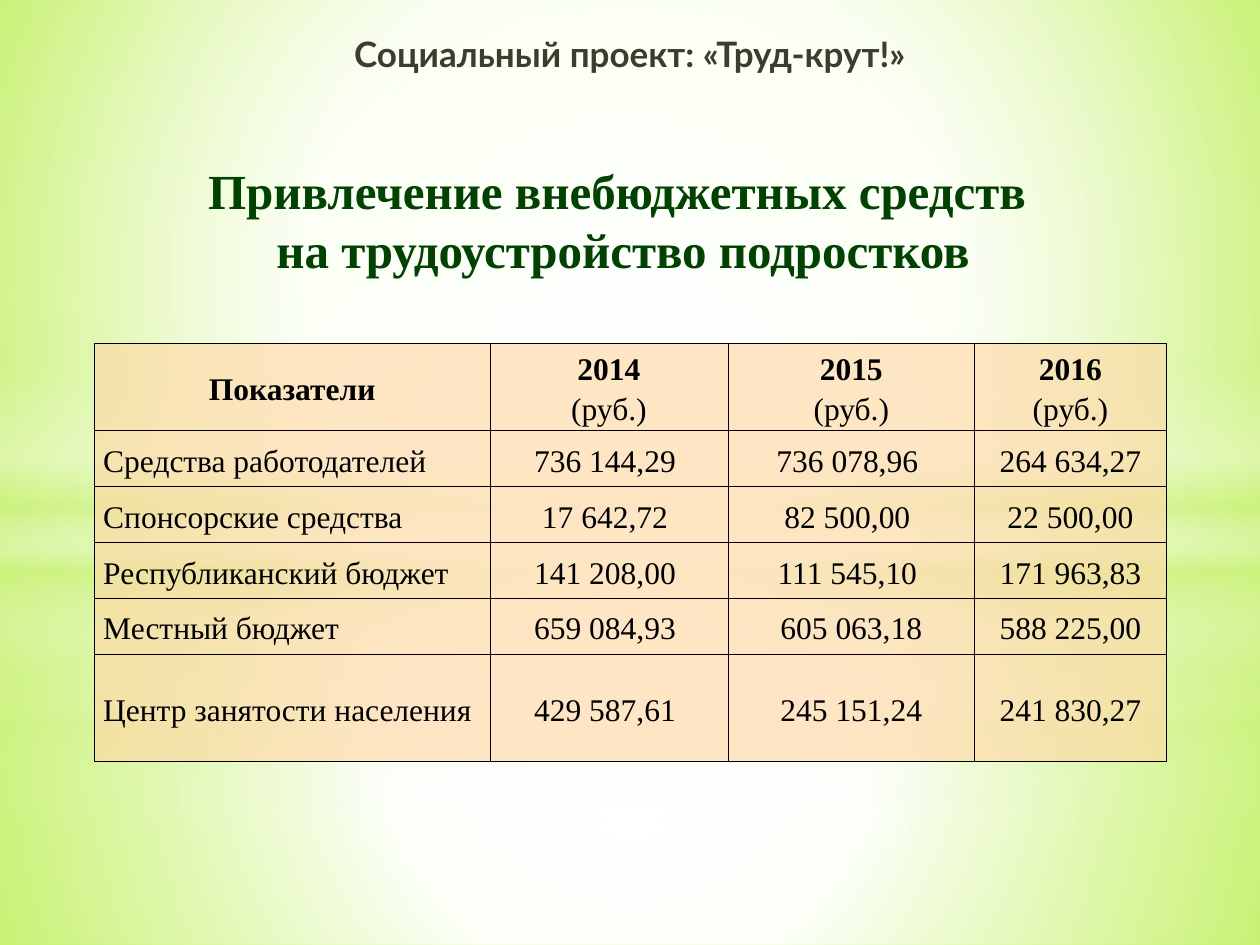
from pptx import Presentation
from pptx.dml.color import RGBColor
from pptx.enum.shapes import MSO_SHAPE
from pptx.enum.text import MSO_ANCHOR, PP_ALIGN
from pptx.oxml import parse_xml
from pptx.oxml.ns import nsdecls, qn
from pptx.util import Pt

RECT, OVAL = MSO_SHAPE.RECTANGLE, MSO_SHAPE.OVAL
LEFT, CENTER = PP_ALIGN.LEFT, PP_ALIGN.CENTER
TOP, MIDDLE, BOTTOM = MSO_ANCHOR.TOP, MSO_ANCHOR.MIDDLE, MSO_ANCHOR.BOTTOM

SERIF, SANS = "Times New Roman", "Lato"
WHITE, LIME, PEACH = "FFFFFF", "CAF278", "FFD9A7"
WIDTH, HEIGHT = 720, 540
MID = (50, 50, 50, 50)

# Gradient stops: position, colour, opacity, all in percent
BACK = [(0, "CAFF60", 100), (60, "F7FFE7", 100), (100, "B7FF29", 100)]
BAND = [(0, WHITE, 0), (29, WHITE, 30), (45, LIME, 40),
        (55, WHITE, 26), (65, LIME, 60), (100, WHITE, 0)]

# Two sets of glows: split height, band top, opacity shift, oval fade end
GLOWS = [(402, 297, 0, 56), (305, 209, 1, 54)]

COLS = [226, 136, 141, 109.5]
ROWS = [32] * 5 + [61]
YEARS = ["2014", "2015", "2016"]
DATA = [
    ("Средства работодателей", "736 144,29 ", "736 078,96 ", "264 634,27"),
    ("Спонсорские средства", "17 642,72 ", "82 500,00 ", "22 500,00"),
    ("Республиканский бюджет", "141 208,00 ", "111 545,10 ", "171 963,83"),
    ("Местный бюджет", "659 084,93 ", " 605 063,18 ", "588 225,00"),
    ("Центр занятости населения", "429 587,61 ", " 245 151,24 ", "241 830,27"),
]


def color(code):
    return RGBColor.from_string(code)


def write(para, text, size=18, font=SERIF, tint="000000", bold=False,
          align=CENTER, line=None, before=0, after=0):
    """Write formatted text; a newline becomes a line break."""
    para.alignment = align
    para.space_before, para.space_after = Pt(before), Pt(after)
    if line:
        para.line_spacing = line
    for i, part in enumerate(text.split("\n")):
        if i:
            para.add_line_break()
        run = para.add_run()
        run.text = part
        run.font.size, run.font.name, run.font.bold = Pt(size), font, bold
        run.font.color.rgb = color(tint)


def blend(fill, stops, focus=None):
    """Set a gradient: circular around focus, or top to bottom."""
    fill.gradient()
    old = fill._xPr.find(qn("a:gradFill"))
    marks = "".join(
        f'<a:gs pos="{pos * 1000}"><a:srgbClr val="{code}">'
        f'<a:alpha val="{alpha * 1000}"/></a:srgbClr></a:gs>'
        for pos, code, alpha in stops)
    way = '<a:lin ang="5400000" scaled="0"/>'
    if focus:
        sides = " ".join(f'{side}="{val * 1000}"' for side, val in zip("ltrb", focus))
        way = f'<a:path path="circle"><a:fillToRect {sides}/></a:path>'
    new = parse_xml(f'<a:gradFill {nsdecls("a")} rotWithShape="1">'
                    f'<a:gsLst>{marks}</a:gsLst>{way}</a:gradFill>')
    old.getparent().replace(old, new)


def glow(slide, kind, top, tall, stops, focus=None):
    """Add a full-width soft shape."""
    shape = slide.shapes.add_shape(kind, 0, Pt(top), Pt(WIDTH), Pt(tall))
    shape.shadow.inherit = False
    shape.line.fill.background()
    blend(shape.fill, stops, focus)


def scene(slide):
    blend(slide.background.fill, BACK, (20, 10, 20, 60))
    for split, band, up, fade in GLOWS:
        low = [(0, WHITE, 91 + up), (37, WHITE, 76 + up), (100, LIME, 79 + up)]
        high = [(0, WHITE, 89 + up), (48, WHITE, 62 + up), (100, LIME, 79 + up)]
        glow(slide, RECT, split, HEIGHT - split, low, MID)
        glow(slide, RECT, 0, split, high, MID)
        glow(slide, RECT, band, 180, BAND)
        glow(slide, OVAL, 126, 402, [(0, WHITE, 100), (fade, WHITE, 0)], MID)


def place(shape, left, top, wide, tall, anchor):
    """Move a text shape and return its first paragraph."""
    shape.left, shape.top = Pt(left), Pt(top)
    shape.width, shape.height = Pt(wide), Pt(tall)
    shape.text_frame.word_wrap = True
    shape.text_frame.vertical_anchor = anchor
    return shape.text_frame.paragraphs[0]


def dress(cell):
    """Set margins, see-through fill and thin borders of a cell."""
    cell.vertical_anchor = MIDDLE
    cell.margin_left = cell.margin_right = Pt(5)
    cell.margin_top = cell.margin_bottom = 0
    cell.fill.solid()
    cell.fill.fore_color.rgb = color(PEACH)
    props = cell._tc.tcPr
    tint = props.find(".//" + qn("a:srgbClr"))
    tint.append(parse_xml(f'<a:alpha {nsdecls("a")} val="65000"/>'))
    for i, side in enumerate("LRTB"):
        props.insert(i, parse_xml(
            f'<a:ln{side} {nsdecls("a")} w="6350"><a:solidFill>'
            f'<a:srgbClr val="000000"/></a:solidFill></a:ln{side}>'))


def grid(slide):
    frame = slide.shapes.add_table(len(ROWS), len(COLS), Pt(54), Pt(196.5),
                                   Pt(sum(COLS)), Pt(sum(ROWS)))
    table = frame.table
    table.first_row = table.horz_banding = False
    for col, wide in zip(table.columns, COLS):
        col.width = Pt(wide)
    for row, tall in zip(table.rows, ROWS):
        row.height = Pt(tall)
    for cell in table.iter_cells():
        dress(cell)

    # Header row
    for c, text in enumerate(["Показатели"] + YEARS):
        body = table.cell(0, c).text_frame
        write(body.paragraphs[0], text, bold=True, line=1.15)
        if c:
            write(body.add_paragraph(), "(руб.)", line=1.15)

    # Sums by source
    for r, row in enumerate(DATA, 1):
        for c, text in enumerate(row):
            para = table.cell(r, c).text_frame.paragraphs[0]
            write(para, text, align=CENTER if c else LEFT, line=1.15)


def main():
    deck = Presentation()
    deck.slide_width, deck.slide_height = Pt(WIDTH), Pt(HEIGHT)
    slide = deck.slides.add_slide(deck.slide_layouts[5])
    scene(slide)

    # Title, raised above the glows
    title = slide.shapes.title
    slide.shapes._spTree.append(title._element)
    write(place(title, 82, 60.5, 548, 102, BOTTOM),
          "Привлечение внебюджетных средств \nна трудоустройство подростков",
          size=28, tint="004200", bold=True)

    # Project name
    name = slide.shapes.add_textbox(0, 0, 0, 0)
    write(place(name, 54, 15, 612, 45, TOP), "Социальный проект: «Труд-крут!»",
          size=20, font=SANS, tint="3E3D2D", bold=True, before=4, after=3)

    grid(slide)
    deck.save("out.pptx")


if __name__ == "__main__":
    main()
